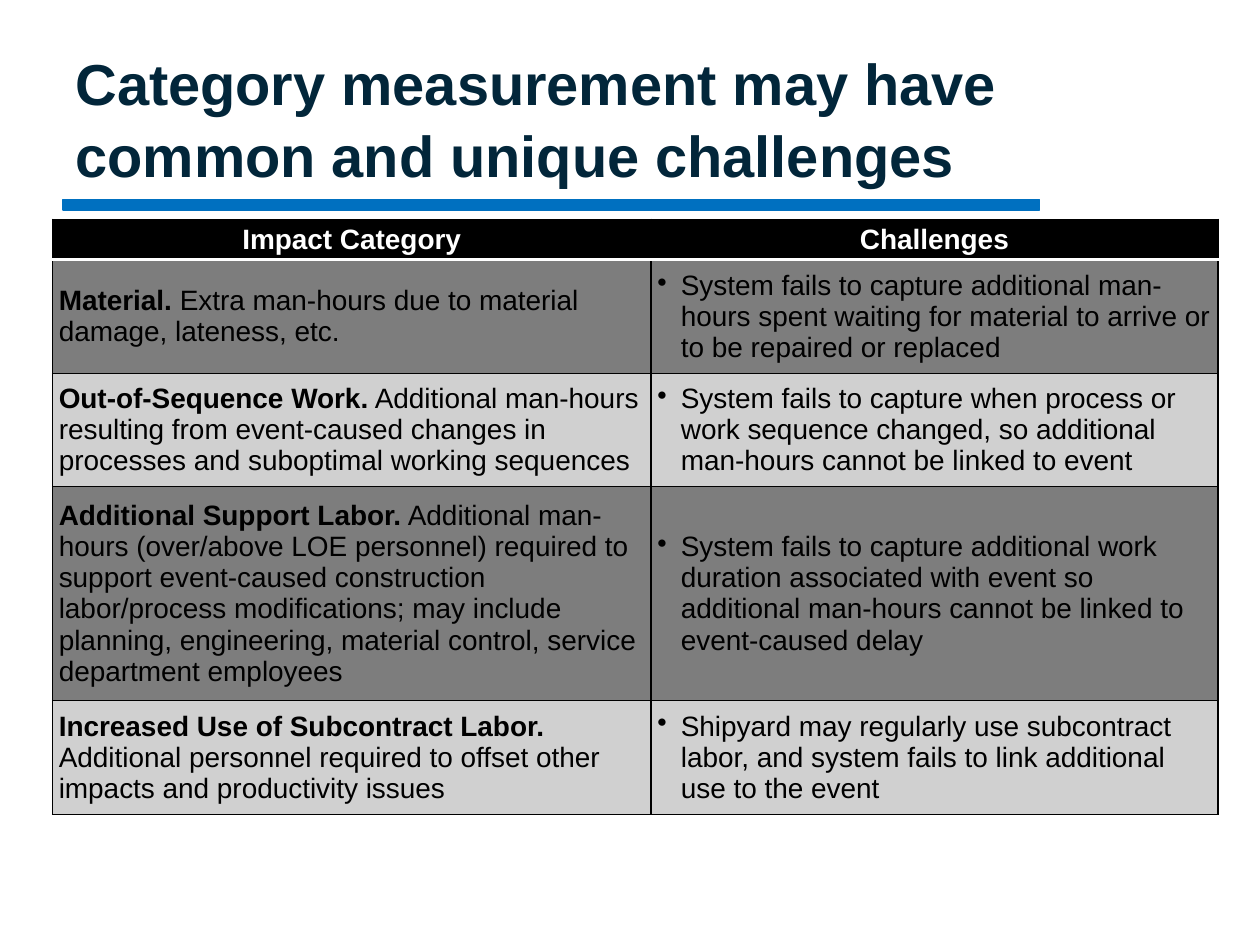
from dataclasses import dataclass

from lxml.etree import SubElement
from pptx import Presentation
from pptx.dml.color import RGBColor
from pptx.enum.shapes import MSO_SHAPE
from pptx.enum.text import MSO_ANCHOR, PP_ALIGN
from pptx.oxml.ns import qn
from pptx.util import Pt

FONT = "Arial"
BLACK, WHITE, BLUE, NAVY = "000000", "FFFFFF", "0070C0", "02263A"
BANDS = ("7D7D7D", "D0D0D0")
HEADERS = ("Impact Category", "Challenges")


@dataclass
class Impact:
    name: str
    detail: str
    challenge: str
    height: float = 62.9


IMPACTS = [
    Impact("Material.", " Extra man-hours due to material damage, lateness, etc.",
           "System fails to capture additional man-hours spent waiting for "
           "material to arrive or to be repaired or replaced"),
    Impact("Out-of-Sequence Work.",
           " Additional man-hours resulting from event-caused changes in "
           "processes and suboptimal working sequences",
           "System fails to capture when process or work sequence changed, so "
           "additional man-hours cannot be linked to event"),
    Impact("Additional Support Labor.",
           " Additional man-hours (over/above LOE personnel) required to support "
           "event-caused construction labor/process modifications; may include "
           "planning, engineering, material control, service department employees",
           "System fails to capture additional work duration associated with "
           "event so additional man-hours cannot be linked to event-caused delay",
           118),
    Impact("Increased Use of Subcontract Labor.",
           " Additional personnel required to offset other impacts and "
           "productivity issues",
           "Shipyard may regularly use subcontract labor, and system fails to "
           "link additional use to the event"),
]


def rgb(color: str) -> RGBColor:
    return RGBColor.from_string(color)


def add_run(p, text: str, size: float, color: str, bold: bool = False) -> None:
    r = p.add_run()
    r.text = text
    r.font.name = FONT
    r.font.size = Pt(size)
    r.font.bold = bold
    r.font.color.rgb = rgb(color)


def add_border(cell, side: str, color: str, width: float) -> None:
    ln = SubElement(cell._tc.get_or_add_tcPr(), qn(f"a:{side}"), w=str(Pt(width)))
    fill = SubElement(ln, qn("a:solidFill"))
    SubElement(fill, qn("a:srgbClr"), val=color)


def format_cell(cell, fill: str, pad_x: float, pad_y: float,
                top: tuple, bottom: tuple):
    cell.vertical_anchor = MSO_ANCHOR.MIDDLE
    cell.margin_left = cell.margin_right = Pt(pad_x)
    cell.margin_top = cell.margin_bottom = Pt(pad_y)
    thin = (BLACK, 0.75)
    for side, line in zip(("lnL", "lnR", "lnT", "lnB"), (thin, thin, top, bottom)):
        add_border(cell, side, *line)
    cell.fill.solid()
    cell.fill.fore_color.rgb = rgb(fill)
    return cell.text_frame.paragraphs[0]


def add_bullet(p) -> None:
    pPr = p._p.get_or_add_pPr()
    pPr.set("marL", str(Pt(13.5)))
    pPr.set("indent", str(-Pt(13.5)))
    SubElement(pPr, qn("a:buChar"), char="•")


def add_title(s, text: str) -> None:
    tf = s.shapes.add_textbox(Pt(36), Pt(21.6), Pt(564), Pt(90)).text_frame
    tf.word_wrap = True
    tf.vertical_anchor = MSO_ANCHOR.MIDDLE
    p = tf.paragraphs[0]
    p.line_spacing = 1.04
    add_run(p, text, 33, NAVY, True)


def add_rule(s) -> None:
    sp = s.shapes.add_shape(MSO_SHAPE.RECTANGLE, Pt(36), Pt(114), Pt(558), Pt(6))
    sp.shadow.inherit = False
    sp.fill.solid()
    sp.fill.fore_color.rgb = rgb(BLUE)
    sp.line.color.rgb = rgb(BLUE)
    sp.line.width = Pt(0.75)


def add_impact_table(s) -> None:
    heights = [22.3] + [i.height for i in IMPACTS]
    table = s.shapes.add_table(len(heights), 2, Pt(30), Pt(125.3),
                               Pt(666), Pt(sum(heights))).table
    for col, width in zip(table.columns, (342, 324)):
        col.width = Pt(width)
    for row, height in zip(table.rows, heights):
        row.height = Pt(height)

    thin, divider = (BLACK, 0.75), (WHITE, 2)
    for c, header in enumerate(HEADERS):
        p = format_cell(table.cell(0, c), BLACK, 3, 2, thin, divider)
        p.alignment = PP_ALIGN.CENTER
        add_run(p, header, 16, WHITE, True)

    for n, impact in enumerate(IMPACTS):
        top = thin if n else divider
        category, challenge = (
            format_cell(table.cell(n + 1, c), BANDS[n % 2], 3.6, 3.6, top, thin)
            for c in range(2))
        add_run(category, impact.name, 16, BLACK, True)
        add_run(category, impact.detail, 16, BLACK)
        add_bullet(challenge)
        add_run(challenge, impact.challenge, 16, BLACK)


def main() -> None:
    prs = Presentation()
    prs.slide_width, prs.slide_height = Pt(720), Pt(540)
    s = prs.slides.add_slide(prs.slide_layouts[6])
    add_rule(s)
    add_title(s, "Category measurement may have common and unique challenges")
    add_impact_table(s)
    prs.save("out.pptx")


if __name__ == "__main__":
    main()
